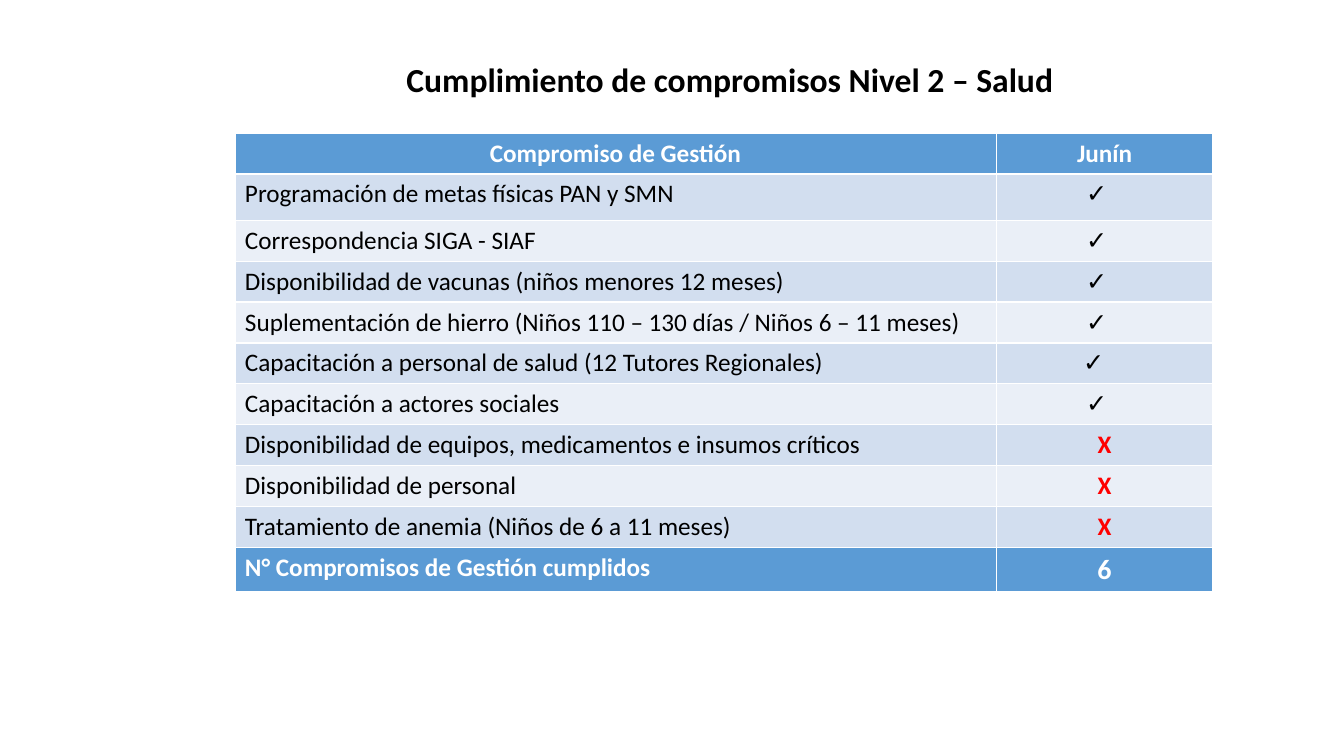
from dataclasses import dataclass
from lxml.etree import SubElement
from pptx import Presentation
from pptx.dml.color import RGBColor
from pptx.enum.text import MSO_ANCHOR, MSO_AUTO_SIZE, PP_ALIGN
from pptx.oxml.ns import qn
from pptx.slide import Slide
from pptx.table import _Cell
from pptx.text.text import TextFrame
from pptx.util import Inches, Pt


@dataclass(frozen=True)
class Theme:
    font: str = "Calibri"
    head: str = "5B9BD5"
    odd: str = "D2DEEF"
    even: str = "EAEFF7"
    white: str = "FFFFFF"
    black: str = "000000"
    red: str = "FF0000"
    title: int = 24
    body: int = 18
    total: int = 20


@dataclass(frozen=True)
class Goal:
    label: str
    met: bool = True
    height: float = 0.4
    inset: float = 0.1


THEME = Theme()
GOALS = [
    Goal("Programación de metas físicas PAN y SMN", height=0.46),
    Goal("Correspondencia SIGA - SIAF"),
    Goal("Disponibilidad de vacunas (niños menores 12 meses)"),
    Goal("Suplementación de hierro (Niños 110 – 130 días / Niños 6 – 11 meses)"),
    Goal("Capacitación a personal de salud (12 Tutores Regionales)", inset=0.16),
    Goal("Capacitación a actores sociales"),
    Goal("Disponibilidad de equipos, medicamentos e insumos críticos", met=False),
    Goal("Disponibilidad de personal", met=False),
    Goal("Tratamiento de anemia (Niños de 6 a 11 meses)", met=False),
]


def write(frame: TextFrame, text: str, *, size: int = THEME.body,
          color: str = THEME.black, bold: bool = False,
          align: PP_ALIGN = PP_ALIGN.CENTER, bullet: str = "") -> None:
    para = frame.paragraphs[0]
    para.alignment = align
    if bullet:
        props = para._p.get_or_add_pPr()
        props.set("marL", str(Inches(0.31)))
        props.set("indent", str(-Inches(0.31)))
        SubElement(props, qn("a:buFont"), typeface=THEME.font)
        SubElement(props, qn("a:buChar"), char=bullet)
    run = para.add_run()
    run.text = text
    font = run.font
    font.name = THEME.font
    font.size = Pt(size)
    font.bold = bold
    font.color.rgb = RGBColor.from_string(color)


def paint(cell: _Cell, fill: str) -> None:
    props = cell._tc.get_or_add_tcPr()
    for side in ("a:lnL", "a:lnR", "a:lnT", "a:lnB"):
        line = SubElement(props, qn(side), w=str(Pt(1)))
        solid = SubElement(line, qn("a:solidFill"))
        SubElement(solid, qn("a:srgbClr"), val=THEME.white)
    cell.fill.solid()
    cell.fill.fore_color.rgb = RGBColor.from_string(fill)


def add_title(slide: Slide) -> None:
    title = slide.shapes.title
    title.left, title.top = Inches(2.6), Inches(0.53)
    title.width, title.height = Inches(9.43), Inches(0.5)
    frame = title.text_frame
    frame.word_wrap = True
    frame.auto_size = MSO_AUTO_SIZE.NONE
    frame.vertical_anchor = MSO_ANCHOR.MIDDLE
    frame.margin_right = Inches(0.25)
    write(frame, "Cumplimiento de compromisos Nivel 2 – Salud",
          size=THEME.title, bold=True)


def add_goals(slide: Slide) -> None:
    heights = [0.4, *(goal.height for goal in GOALS), 0.42]
    table = slide.shapes.add_table(
        len(heights), 2, Inches(2.33), Inches(1.32),
        Inches(9.7), Inches(sum(heights))).table
    for col, width in zip(table.columns, (7.55, 2.15)):
        col.width = Inches(width)
    for row, height in zip(table.rows, heights):
        row.height = Inches(height)

    last = len(heights) - 1
    for num in range(len(heights)):
        fill = THEME.odd if num % 2 else THEME.even
        if num in (0, last):
            fill = THEME.head
        for cell in table.rows[num].cells:
            paint(cell, fill)

    for col, text in enumerate(("Compromiso de Gestión", "Junín")):
        write(table.cell(0, col).text_frame, text, color=THEME.white, bold=True)
    for num, goal in enumerate(GOALS, 1):
        write(table.cell(num, 0).text_frame, goal.label, align=PP_ALIGN.LEFT)
        mark = table.cell(num, 1)
        if goal.met:
            mark.margin_right = Inches(goal.inset)
            write(mark.text_frame, " ", bullet="✓")
        else:
            write(mark.text_frame, "X", color=THEME.red, bold=True)
    write(table.cell(last, 0).text_frame, "N° Compromisos de Gestión cumplidos",
          color=THEME.white, bold=True, align=PP_ALIGN.LEFT)
    write(table.cell(last, 1).text_frame, "6", size=THEME.total,
          color=THEME.white, bold=True)


def main() -> None:
    deck = Presentation()
    deck.slide_width, deck.slide_height = Inches(13.33), Inches(7.5)
    slide = deck.slides.add_slide(deck.slide_layouts.get_by_name("Title Only"))
    add_goals(slide)
    add_title(slide)
    deck.save("out.pptx")


if __name__ == "__main__":
    main()
